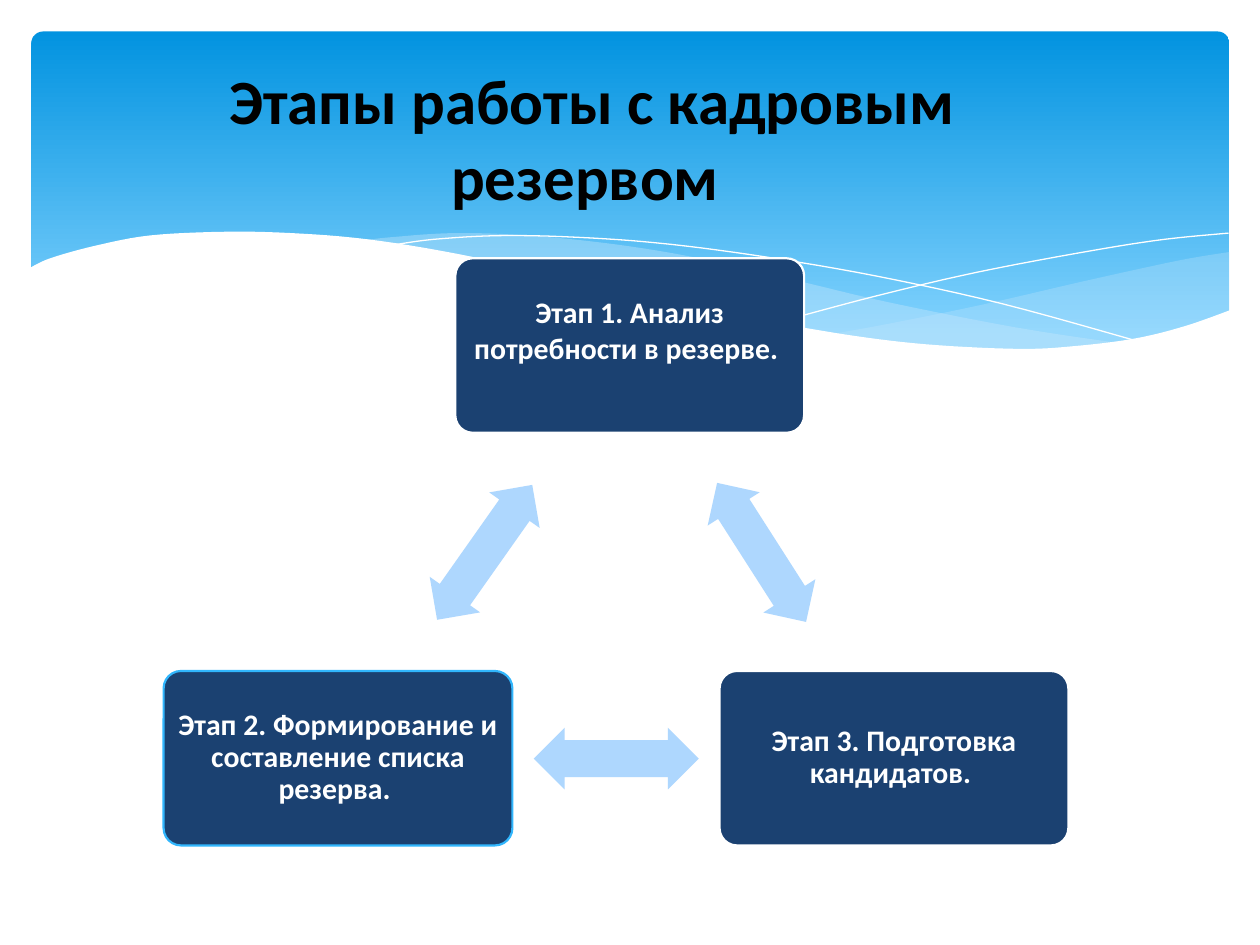
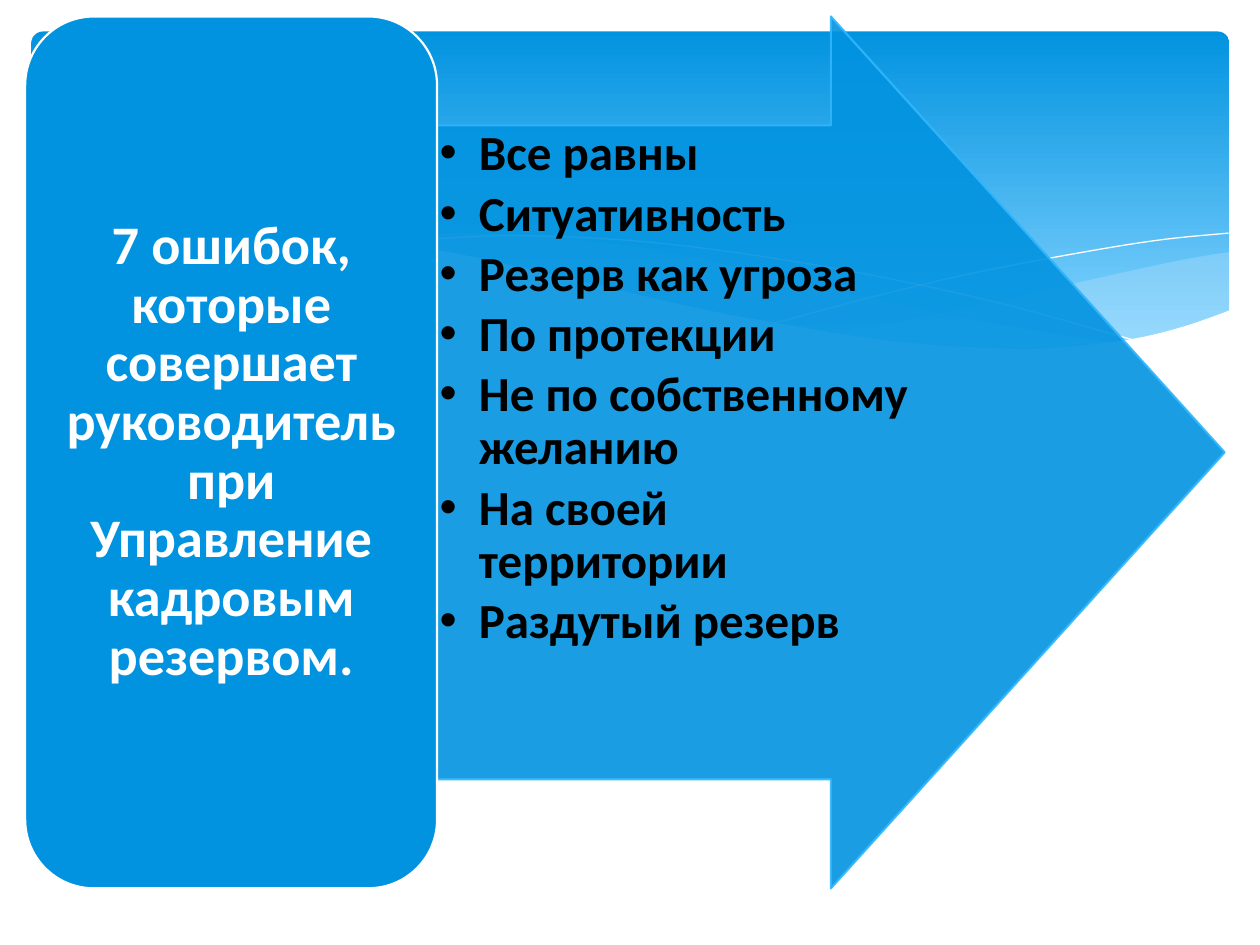
from typing import NamedTuple

from lxml.etree import SubElement
from pptx import Presentation
from pptx.dml.color import RGBColor as Rgb
from pptx.enum.shapes import MSO_SHAPE as Kind
from pptx.enum.text import MSO_ANCHOR as Anchor, MSO_AUTO_SIZE as Fit, PP_ALIGN as Align
from pptx.oxml.ns import qn
from pptx.util import Pt

HUES = {
    "navy": "1B4171", "blue": "0293E0", "sky": "31B6FD", "pale": "83D3FE",
    "wave": "C6E7FC", "arrow": "AED7FE", "white": "FFFFFF", "black": "000000",
}
FONT = "Calibri"
EDGE = 1.25

Knots = list[tuple[float, float]]


class Area(NamedTuple):
    left: float
    top: float
    width: float
    height: float


class Wave(NamedTuple):
    """Smooth curves joined end to end; without a fill it is a white line."""
    curves: list[Knots]
    fill: str = ""
    alpha: int = 100


class Stage(NamedTuple):
    text: str
    left: float
    top: float
    edge: str = "white"
    spacing: float = 0.9
    lift: float = 0


class Swap(NamedTuple):
    left: float
    top: float
    turn: float


BAND = Area(18, 18, 684.5, 194.5)
WAVES = [
    Wave([[(702.7, 144), (673, 149), (620, 160.6), (561, 174.2), (508, 185), (476, 190.8)],
          [(476, 190.8), (507.6, 195), (545, 198.7), (578, 200), (615, 198.7),
           (646, 194.4), (673, 188.6), (702.7, 177.8)]], "wave", 29),
    Wave([[(643, 196.6), (581, 187.2), (508, 172.8), (453, 159.8), (399.6, 147.6),
           (352, 139.7), (302.4, 134.6), (260, 133.2), (225.4, 135.4), (206, 137.5)],
          [(206, 137.5), (246, 143.3), (291, 152), (323.3, 159.8), (381.6, 172.8),
           (432.7, 183.6), (489.6, 193), (538.6, 198.7), (581, 200.2), (617, 199.4),
           (643, 196.6)]], "wave", 40),
    Wave([[(222.5, 140.4), (247.7, 136.8), (288.7, 134.6), (337.7, 136), (383.8, 139.7),
           (437.8, 146.9), (500.4, 157.7), (572.4, 173.5), (653, 195.8)]]),
    Wave([[(441.4, 185), (500.4, 169.2), (558.7, 155.5), (623.5, 143.3), (665.3, 136.8),
           (702, 133.2)]]),
    Wave([[(703.4, 177.1), (676.8, 186.5), (647.3, 193.7), (612, 198), (582.5, 199.4),
           (535.7, 197.3), (495.4, 193), (450.7, 185.8), (399.6, 176.4), (321.8, 158.4),
           (262.8, 145.4), (210.2, 136.8), (165.6, 133.2), (127.4, 132.5), (85.7, 134.6),
           (54.7, 140.4), (28.8, 147.6), (16.6, 153.4)],
          [(16.6, 236.9), (703.4, 236.9)]], "white"),
]

STAGE_SIZE = (199.3, 99.7)
STAGES = [
    Stage("Этап 1. Анализ потребности в резерве. ", 260.2, 147.6, spacing=1, lift=18.4),
    Stage("Этап 3. Подготовка кандидатов. ", 411.2, 383.4),
    Stage("Этап 2. Формирование и составление списка резерва. ", 93.5, 383.4, "sky"),
]
SWAP_SIZE = (94.3, 35.3)
SWAPS = [Swap(388, 298, 57.4), Swap(305, 415.8, 180), Swap(229.8, 298, 305.2)]

ERRORS = [
    "Все равны", "Ситуативность", "Резерв как угроза", "По протекции",
    "Не по собственному желанию", "На своей территории", "Раздутый резерв",
]


def tint(hue: str) -> Rgb:
    return Rgb.from_string(HUES[hue])


def place(shape, area: Area) -> None:
    shape.left, shape.top, shape.width, shape.height = map(Pt, area)


def paint(shape, fill: str = "", edge: str = "", width: float = EDGE) -> None:
    shape.shadow.inherit = False
    if fill:
        shape.fill.solid()
        shape.fill.fore_color.rgb = tint(fill)
    else:
        shape.fill.background()
    if edge:
        shape.line.color.rgb = tint(edge)
        shape.line.width = Pt(width)
    else:
        shape.line.fill.background()


def fade(shape, alpha: int) -> None:
    """Set the opacity, in percent, of every colour of the shape."""
    for clr in list(shape.element.spPr.iter(qn("a:srgbClr"))):
        SubElement(clr, qn("a:alpha")).set("val", str(alpha * 1000))


def draw(slide, kind: Kind, area: Area, *adj: float):
    shape = slide.shapes.add_shape(kind, *map(Pt, area))
    for i, val in enumerate(adj):
        shape.adjustments[i] = val
    return shape


def frame(shape, anchor: Anchor, left: float, top: float, lift: float = 0):
    """Set margins and anchor; lift is added to the bottom margin."""
    box = shape.text_frame
    box.word_wrap, box.auto_size, box.vertical_anchor = True, Fit.NONE, anchor
    box.margin_left = box.margin_right = Pt(left)
    box.margin_top, box.margin_bottom = Pt(top), Pt(top + lift)
    return box


def write(para, text: str, size: float, hue: str, align: Align = Align.CENTER,
          spacing: float = 0.9, after: float = 0) -> None:
    para.alignment, para.line_spacing = align, spacing
    para.space_before, para.space_after = Pt(0), Pt(after)
    run = para.add_run()
    run.text = text
    font = run.font
    font.name, font.size, font.bold = FONT, Pt(size), True
    font.color.rgb = tint(hue)


def smooth(knots: Knots, steps: int = 6) -> Knots:
    """Sample a Catmull-Rom curve through the knots."""
    if len(knots) < 3:
        return knots
    ends = [knots[0], *knots, knots[-1]]
    dots = [knots[0]]
    for quad in zip(ends, ends[1:], ends[2:], ends[3:]):
        for step in range(1, steps + 1):
            t = step / steps
            x, y = (
                b + t * (c - a + t * (2 * a - 5 * b + 4 * c - d + t * (3 * (b - c) + d - a))) / 2
                for a, b, c, d in zip(*quad)
            )
            dots.append((x, y))
    return dots


def draw_wave(slide, wave: Wave):
    dots = [(Pt(x), Pt(y)) for knots in wave.curves for x, y in smooth(knots)]
    pen = slide.shapes.build_freeform(*dots[0])
    pen.add_line_segments(dots[1:], close=bool(wave.fill))
    shape = pen.convert_to_shape()
    paint(shape, wave.fill, "" if wave.fill else "white", 0)
    if wave.alpha < 100:
        fade(shape, wave.alpha)
    return shape


def dress(master, slide) -> None:
    """Draw the band and waves on the slide, then move them to the master."""
    band = draw(slide, Kind.ROUNDED_RECTANGLE, BAND, 0.034)
    paint(band)
    band.fill.gradient()
    band.fill.gradient_angle = 270
    for stop, hue, pos in zip(band.fill.gradient_stops, ("blue", "pale"), (0, 0.9)):
        stop.color.rgb = tint(hue)
        stop.position = pos
    parts = [band, *(draw_wave(slide, wave) for wave in WAVES)]
    tree = master.element.cSld.spTree
    for i, part in enumerate(parts):
        part.element.nvSpPr.cNvPr.id = 100 + i
        tree.insert(2 + i, part.element)


def raise_up(shape) -> None:
    shape.element.getparent().append(shape.element)


def add_stages(slide) -> None:
    for stage in STAGES:
        box = draw(slide, Kind.ROUNDED_RECTANGLE,
                   Area(stage.left, stage.top, *STAGE_SIZE), 0.1)
        paint(box, "navy", stage.edge)
        text = frame(box, Anchor.MIDDLE, 5, 5, stage.lift)
        write(text.paragraphs[0], stage.text, 17, "white", spacing=stage.spacing)
    for swap in SWAPS:
        arrow = draw(slide, Kind.LEFT_RIGHT_ARROW,
                     Area(swap.left, swap.top, *SWAP_SIZE), 0.6, 0.5)
        arrow.rotation = swap.turn
        paint(arrow, "arrow")
    title = slide.shapes.title
    place(title, Area(77.8, 31.7, 521.3, 94.3))
    text = frame(title, Anchor.TOP, 7.2, 3.6)
    write(text.paragraphs[0], "Этапы работы с кадровым резервом ", 36, "black", spacing=1)
    raise_up(title)


def add_bullet(para) -> None:
    props = para._p.get_or_add_pPr()
    props.set("marL", str(Pt(22.5)))
    props.set("indent", str(-Pt(22.5)))
    SubElement(props, qn("a:buChar")).set("char", "•")


def add_errors(slide) -> None:
    arrow = draw(slide, Kind.RIGHT_ARROW, Area(249.8, 9.4, 450, 498.2), 0.75, 0.5)
    paint(arrow, "blue", "sky")
    fade(arrow, 90)

    body = slide.placeholders[1]
    place(body, Area(249.8, 72, 281.5, 373.7))
    text = frame(body, Anchor.TOP, 1.4, 1.4)
    for i, error in enumerate(ERRORS):
        para = text.add_paragraph() if i else text.paragraphs[0]
        write(para, error, 28, "black", Align.LEFT, after=4.2)
        add_bullet(para)
    raise_up(body)

    panel = draw(slide, Kind.ROUNDED_RECTANGLE, Area(14.4, 9.4, 235.4, 498.2))
    paint(panel, "blue", "white")
    title = slide.shapes.title
    place(title, Area(25.9, 20.9, 212.4, 475.2))
    text = frame(title, Anchor.MIDDLE, 9.4, 4.3)
    write(text.paragraphs[0],
          "7 ошибок, которые совершает руководитель при Управление кадровым резервом.",
          31, "white")
    raise_up(title)


def main() -> None:
    prs = Presentation()
    prs.slide_width, prs.slide_height = Pt(720), Pt(540)
    stages = prs.slides.add_slide(prs.slide_layouts[5])
    dress(prs.slide_master, stages)
    add_stages(stages)
    add_errors(prs.slides.add_slide(prs.slide_layouts[1]))
    prs.save("out.pptx")


if __name__ == "__main__":
    main()
